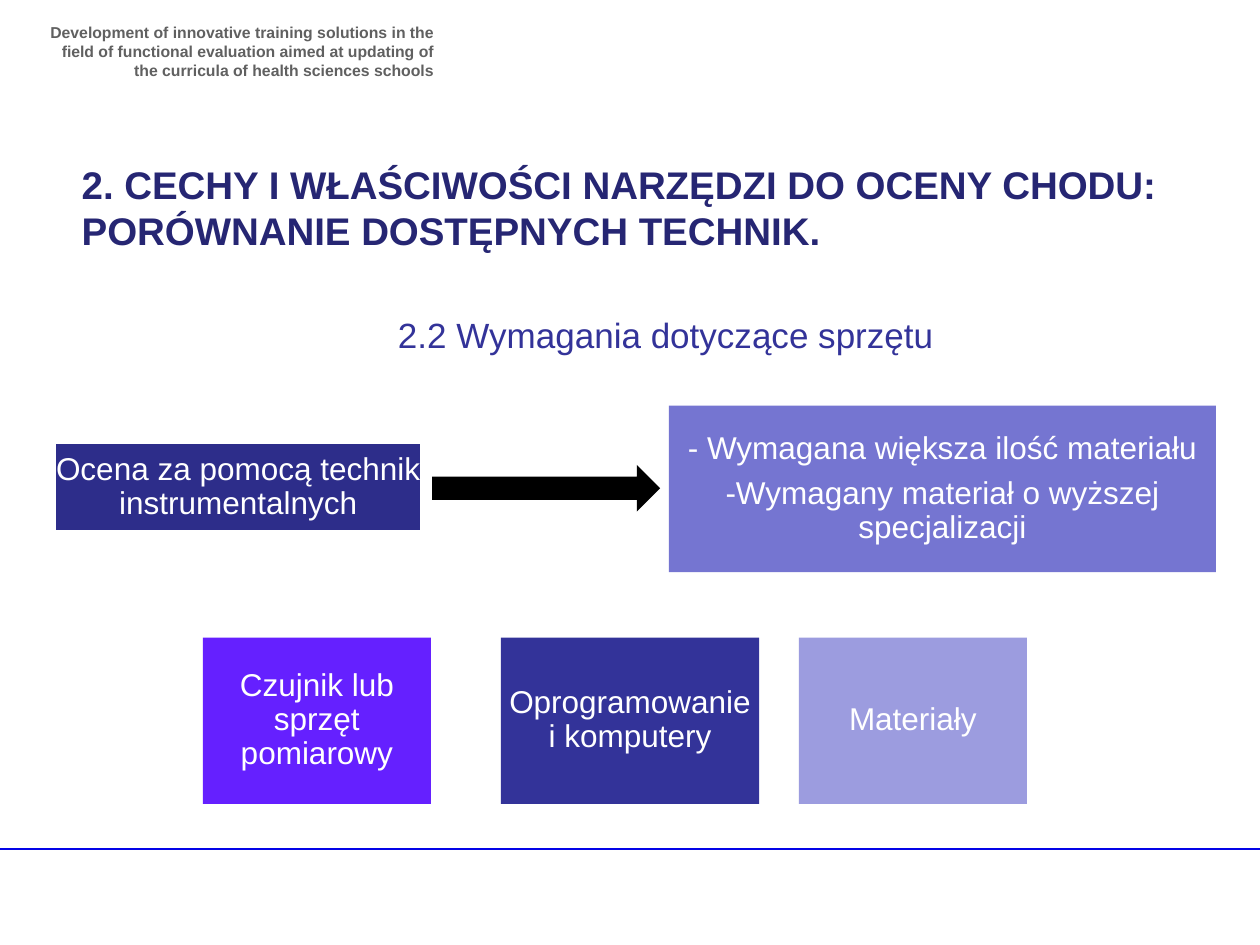
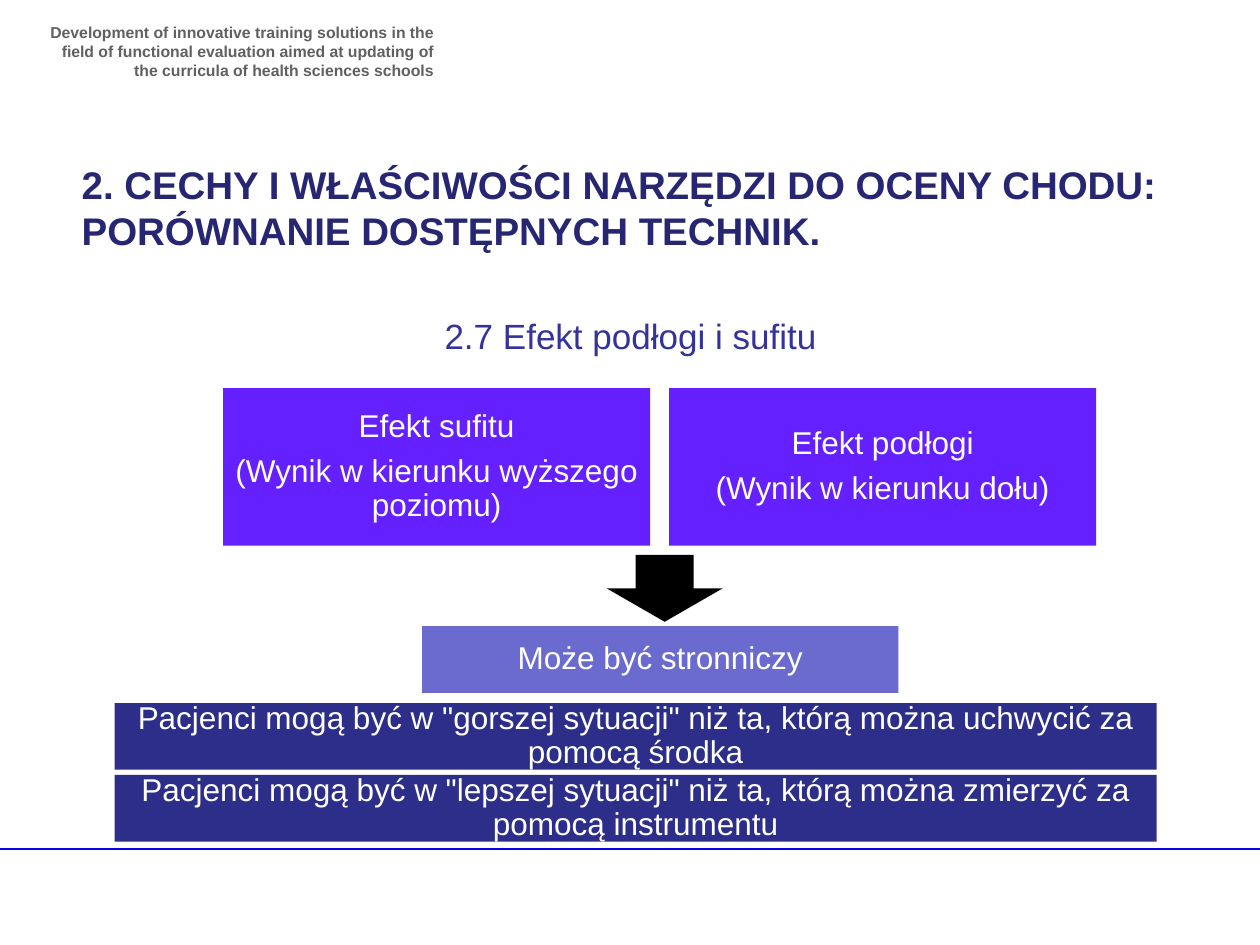
from pptx import Presentation
from pptx.dml.color import RGBColor
from pptx.enum.shapes import MSO_CONNECTOR, MSO_SHAPE
from pptx.enum.text import MSO_ANCHOR, PP_ALIGN
from pptx.oxml.ns import qn
from pptx.util import Inches, Pt

LEFT, CENTER, RIGHT = PP_ALIGN.LEFT, PP_ALIGN.CENTER, PP_ALIGN.RIGHT
TOP, MIDDLE = MSO_ANCHOR.TOP, MSO_ANCHOR.MIDDLE
RECTANGLE, ARROW = MSO_SHAPE.RECTANGLE, MSO_SHAPE.RIGHT_ARROW

SLIDE_WIDTH, SLIDE_HEIGHT = 10, 7.5
FOOTER_LINE_Y = 6.74
FONT = "Arial"
COLORS = {
    "rule": "0404E6", "project": "606060", "title": "262673", "subtitle": "333399",
    "navy": "2D2D8A", "indigo": "333399", "violet": "6520FF", "blue": "7575D1",
    "slate": "6B6BCF", "lavender": "9C9CDF", "white": "FFFFFF", "black": "000000",
}

PROJECT = ("Development of innovative training solutions in the ﬁeld of functional "
           "evaluation aimed at updating of the curricula of health sciences schools")
TITLE = "2. CECHY I WŁAŚCIWOŚCI NARZĘDZI DO OCENY CHODU: PORÓWNANIE DOSTĘPNYCH TECHNIK."

# Equipment slide
INSTRUMENTS = "Ocena za pomocą technik instrumentalnych"
REQUIREMENTS = ["- Wymagana większa ilość materiału",
                "-Wymagany materiał o wyższej specjalizacji"]
EQUIPMENT = [  # text, color, width
    ("Czujnik lub sprzęt pomiarowy", "violet", 1.81),
    ("Oprogramowanie i komputery", "indigo", 2.05),
    ("Materiały", "lavender", 1.81),
]

# Floor and ceiling slide
EFFECTS = [
    ["Efekt sufitu", "(Wynik w kierunku wyższego poziomu)"],
    ["Efekt podłogi", "(Wynik w kierunku dołu)"],
]
BIAS = "Może być stronniczy"
PATIENTS = [
    'Pacjenci mogą być w "gorszej sytuacji" niż ta, którą można uchwycić za pomocą środka',
    'Pacjenci mogą być w "lepszej sytuacji" niż ta, którą można zmierzyć za pomocą instrumentu',
]


def rgb(name):
    return RGBColor.from_string(COLORS[name])


def write(shape, text, size=18, color="white", bold=False, align=CENTER,
          anchor=MIDDLE, line_spacing=0.9, gap=6.3, inset=0.01):
    """Fill a shape with one paragraph, or with a list of them set gap points apart."""
    frame = shape.text_frame
    frame.word_wrap = True
    frame.vertical_anchor = anchor
    if inset is not None:
        frame.margin_left = frame.margin_right = Inches(inset)
        frame.margin_top = frame.margin_bottom = Inches(inset)
    lines = [text] if isinstance(text, str) else text
    for index, line in enumerate(lines):
        paragraph = frame.add_paragraph() if index else frame.paragraphs[0]
        paragraph.text = line
        paragraph.alignment = align
        paragraph.line_spacing = line_spacing
        if index:
            paragraph.space_before = Pt(gap)
        font = paragraph.font
        font.name, font.size, font.bold = FONT, Pt(size), bold
        font.color.rgb = rgb(color)


def add_label(slide, box, text, **text_format):
    label = slide.shapes.add_textbox(*map(Inches, box))
    write(label, text, align=text_format.pop("align", LEFT), anchor=TOP,
          line_spacing=1.0, inset=None, **text_format)


def add_filled(slide, kind, box, color, outline=None):
    shape = slide.shapes.add_shape(kind, *map(Inches, box))
    shape.shadow.inherit = False
    shape.fill.solid()
    shape.fill.fore_color.rgb = rgb(color)
    if outline:
        shape.line.color.rgb = rgb(outline)
        shape.line.width = Pt(2)
    else:
        shape.line.fill.background()
    return shape


def add_block(slide, box, text, color, outline=None):
    write(add_filled(slide, RECTANGLE, box, color, outline), text)


def add_base_slide(presentation, subtitle, subtitle_box):
    """Add a blank slide with the shared rule, project name and title."""
    slide = presentation.slides.add_slide(presentation.slide_layouts[6])
    rule = slide.shapes.add_connector(
        MSO_CONNECTOR.STRAIGHT, 0, Inches(FOOTER_LINE_Y),
        Inches(SLIDE_WIDTH), Inches(FOOTER_LINE_Y))
    rule.line.color.rgb = rgb("rule")
    rule.line.width = Pt(1)
    properties = rule._element.spPr
    properties.append(properties.makeelement(qn("a:effectLst"), {}))
    add_label(slide, (0.28, 0.13, 3.26, 0.47), PROJECT, size=9, color="project",
              bold=True, align=RIGHT)
    add_label(slide, (0.55, 1.23, 9.09, 0.84), TITLE, size=22, color="title", bold=True)
    add_label(slide, subtitle_box, subtitle, size=20, color="subtitle")
    return slide


def build_equipment_slide(presentation):
    slide = add_base_slide(presentation, "2.2 Wymagania dotyczące sprzętu",
                           (3.06, 2.44, 4.85, 0.44))
    add_block(slide, (0.43, 3.51, 2.92, 0.71), INSTRUMENTS, "navy", outline="white")
    add_filled(slide, ARROW, (3.43, 3.69, 1.81, 0.37), "black")
    row_height = 1.32
    add_block(slide, (5.31, 3.22, 4.34, row_height), REQUIREMENTS, "blue")
    first_left, pitch = 1.61, 2.365
    for column, (text, color, width) in enumerate(EQUIPMENT):
        add_block(slide, (first_left + column * pitch, 5.06, width, row_height), text, color)


def build_effects_slide(presentation):
    slide = add_base_slide(presentation, "2.7 Efekt podłogi i sufitu",
                           (3.43, 2.45, 3.7, 0.77))
    effect_width, effect_gap = 3.39, 0.15
    for column, text in enumerate(EFFECTS):
        left = 1.77 + column * (effect_width + effect_gap)
        add_block(slide, (left, 3.08, effect_width, 1.25), text, "violet")
    add_filled(slide, ARROW, (5.01, 4.21, 0.53, 0.92), "black").rotation = 90
    bar_height, bar_gap = 0.53, 0.04
    add_block(slide, (3.35, 4.97, 3.78, bar_height), BIAS, "slate")
    for row, text in enumerate(PATIENTS):
        top = 5.58 + row * (bar_height + bar_gap)
        add_block(slide, (0.91, top, 8.27, bar_height), text, "navy")


def main():
    presentation = Presentation()
    presentation.slide_width = Inches(SLIDE_WIDTH)
    presentation.slide_height = Inches(SLIDE_HEIGHT)
    build_equipment_slide(presentation)
    build_effects_slide(presentation)
    presentation.save("out.pptx")


if __name__ == "__main__":
    main()
